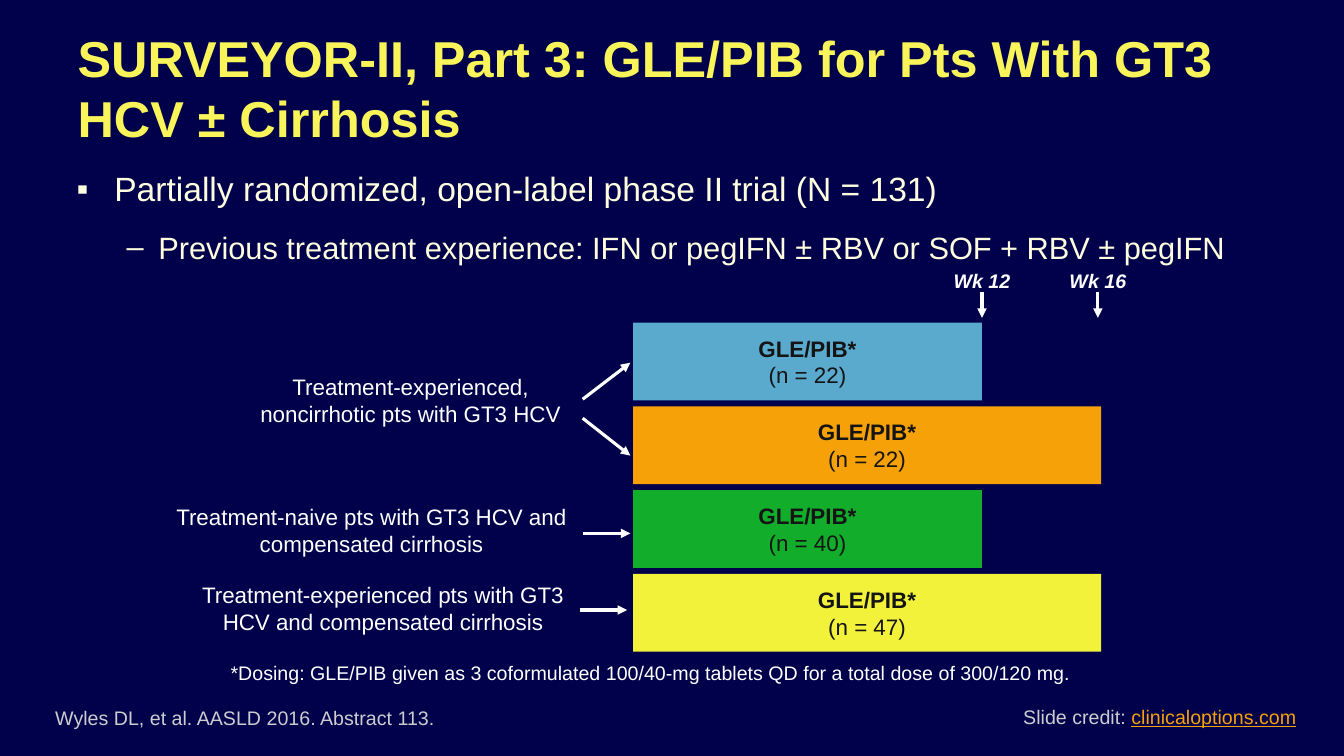
from lxml import etree
from pptx import Presentation
from pptx.dml.color import RGBColor
from pptx.enum.shapes import MSO_CONNECTOR, MSO_SHAPE
from pptx.enum.text import MSO_ANCHOR, PP_ALIGN
from pptx.oxml.ns import qn
from pptx.util import Cm, Pt

LINE, RECT = MSO_CONNECTOR.STRAIGHT, MSO_SHAPE.RECTANGLE
TOP, MID, LOW = MSO_ANCHOR.TOP, MSO_ANCHOR.MIDDLE, MSO_ANCHOR.BOTTOM
LEFT, CENTER = PP_ALIGN.LEFT, PP_ALIGN.CENTER

NAVY = RGBColor(0x00, 0x00, 0x4B)
LEMON = RGBColor(0xF8, 0xF4, 0x5A)
CREAM = RGBColor(0xFE, 0xFD, 0xDE)
WHITE = RGBColor(0xFF, 0xFF, 0xFF)
INK = RGBColor(0x14, 0x14, 0x15)
GRAY = RGBColor(0xCD, 0xCD, 0xCF)
BLUE = RGBColor(0x5A, 0xAA, 0xCE)
ORANGE = RGBColor(0xF6, 0xA1, 0x08)
GREEN = RGBColor(0x12, 0xAD, 0x2B)
YELLOW = RGBColor(0xF2, 0xF2, 0x3A)

# Content; lengths in cm
TITLE = "SURVEYOR-II, Part 3: GLE/PIB for Pts With GT3 HCV ± Cirrhosis"
POINTS = [  # text, size, bullet, indent, hanging
    ("Partially randomized, open-label phase II trial (N = 131)", 24, "▪", 0.95, 0.95),
    ("Previous treatment experience: IFN or pegIFN ± RBV or SOF + RBV ± pegIFN",
     22, "–", 2.06, 0.8),
]
DRUG = "GLE/PIB*"
ARMS = [("(n = 22)", 12, BLUE), ("(n = 22)", 16, ORANGE),
        ("(n = 40)", 12, GREEN), ("(n = 47)", 16, YELLOW)]
WIDTHS = {12: 8.79, 16: 11.79}
GROUPS = [
    ("Treatment-experienced, noncirrhotic pts with GT3 HCV", (5.61, 8.2, 9.47, 3.78)),
    ("Treatment-naive pts with GT3 HCV and compensated cirrhosis",
     (3.91, 12.32, 10.9, 2.08)),
    ("Treatment-experienced pts with GT3 HCV and compensated cirrhosis",
     (4.8, 13.97, 9.7, 2.69)),
]
WEEKS = [("Wk 12", 24.74), ("Wk 16", 27.66)]
ARROWS = [(14.68, 10.06, 15.88, 9.14), (14.68, 10.54, 15.88, 11.48),
          (14.68, 13.44, 15.88, 13.44), (14.6, 15.37, 15.8, 15.37)]
DOSE = "*Dosing: GLE/PIB given as 3 coformulated 100/40-mg tablets QD for a total dose of 300/120 mg."
CITE = "Wyles DL, et al. AASLD 2016. Abstract 113."
CREDIT, SITE = "Slide credit: ", "clinicaloptions.com"

BAR_X, BAR_Y, BAR_H, PITCH = 15.95, 8.13, 1.96, 2.11


def style(font, size, color, bold=False, italic=False, under=False):
    font.name, font.size = "Arial", Pt(size)
    font.color.rgb = color
    font.bold, font.italic, font.underline = bold, italic, under


def write(par, text, align=LEFT, **form):
    par.alignment = align
    run = par.add_run()
    run.text = text
    style(run.font, **form)


def place(shape, x, y, w, h):
    shape.left, shape.top, shape.width, shape.height = Cm(x), Cm(y), Cm(w), Cm(h)


def box(spot, anchor=TOP, wrap=True):
    """Add a text box and return its text frame."""
    frame = slide.shapes.add_textbox(*map(Cm, spot)).text_frame
    frame.word_wrap, frame.vertical_anchor = wrap, anchor
    return frame


def arrow(*ends):
    link = slide.shapes.add_connector(LINE, *map(Cm, ends))
    link.line.color.rgb, link.line.width = WHITE, Pt(2.25)
    etree.SubElement(link.line._get_or_add_ln(), qn("a:tailEnd"), type="triangle")
    etree.SubElement(link._element.spPr, qn("a:effectLst"))


def bullet(par, mark, indent, hang):
    props = par._p.get_or_add_pPr()
    props.set("marL", str(Cm(indent)))
    props.set("indent", str(-Cm(hang)))
    tint = etree.SubElement(props, qn("a:buClr"))
    etree.SubElement(tint, qn("a:srgbClr"), val=str(CREAM))
    etree.SubElement(props, qn("a:buFont"), typeface="Arial")
    etree.SubElement(props, qn("a:buChar"), char=mark)


deck = Presentation()
deck.slide_width, deck.slide_height = Cm(33.86), Cm(19.05)
slide = deck.slides.add_slide(deck.slide_layouts[5])
slide.background.fill.solid()
slide.background.fill.fore_color.rgb = NAVY

title = slide.shapes.title
place(title, 1.7, 0.66, 30.2, 3.07)
title.text_frame.word_wrap, title.text_frame.vertical_anchor = True, MID
write(title.text_frame.paragraphs[0], TITLE, size=36, color=LEMON, bold=True)

body = box((1.68, 4.22, 30.2, 2.97))
for i, (text, size, mark, indent, hang) in enumerate(POINTS):
    par = body.add_paragraph() if i else body.paragraphs[0]
    par.level = i
    bullet(par, mark, indent, hang)
    par.line_spacing, par.space_after = 0.9, Pt(7)
    par.space_before = Pt(10 if i else 0)
    write(par, text, size=size, color=CREAM)

for i, (count, week, fill) in enumerate(ARMS):
    bar = slide.shapes.add_shape(RECT, 0, 0, 0, 0)
    place(bar, BAR_X, BAR_Y + i * PITCH, WIDTHS[week], BAR_H)
    bar.shadow.inherit = False
    bar.fill.solid()
    bar.fill.fore_color.rgb = fill
    bar.line.fill.background()
    bar.text_frame.word_wrap, bar.text_frame.vertical_anchor = False, MID
    par = bar.text_frame.paragraphs[0]
    write(par, DRUG, align=CENTER, size=16, color=INK, bold=True)
    par.add_line_break()
    write(par, count, align=CENTER, size=16, color=INK)

for text, spot in GROUPS:
    write(box(spot, MID).paragraphs[0], text, align=CENTER, size=16, color=WHITE)

for text, x in WEEKS:
    label = box((x - 1.12, 6.65, 2.24, 0.86))
    write(label.paragraphs[0], text, align=CENTER, size=14, color=WHITE,
          bold=True, italic=True)
    arrow(x, 7.35, x, 8.01)

for ends in ARROWS:
    arrow(*ends)

write(box((5.56, 16.54, 23.4, 0.86)).paragraphs[0], DOSE, size=14, color=WHITE)
write(box((1.14, 17.65, 22.25, 0.86), LOW).paragraphs[0], CITE, size=14, color=GRAY)
credit = box((25.53, 17.63, 7.42, 0.86), wrap=False).paragraphs[0]
write(credit, CREDIT, size=14, color=GRAY)
write(credit, SITE, size=14, color=ORANGE, under=True)

deck.save("out.pptx")
